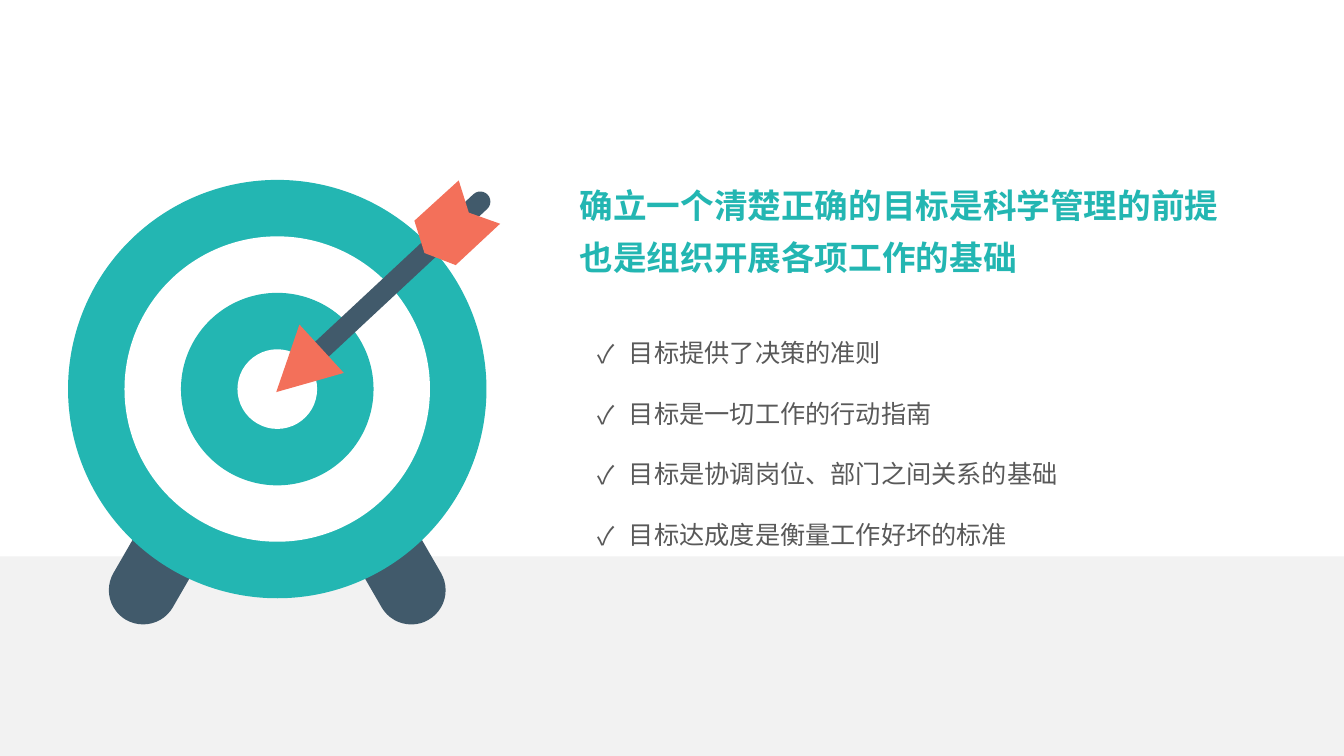
from pptx import Presentation
from pptx.dml.color import RGBColor
from pptx.enum.shapes import MSO_SHAPE as Preset
from pptx.enum.text import MSO_ANCHOR as Anchor, MSO_AUTO_SIZE as AutoSize, PP_ALIGN as Align
from pptx.oxml.ns import qn
from pptx.util import Inches, Pt
from lxml.etree import SubElement

FONT = "Noto Sans CJK SC"
TEAL, NAVY, CORAL = "23B6B2", "415A6B", "F3705A"
WHITE, BAND, GREY = "FFFFFF", "F2F2F2", "595959"
TARGET_X, TARGET_Y = 2.75, 3.86

TITLE = ["确立一个清楚正确的目标是科学管理的前提", "也是组织开展各项工作的基础"]
POINTS = [
    "目标提供了决策的准则",
    "目标是一切工作的行动指南",
    "目标是协调岗位、部门之间关系的基础",
    "目标达成度是衡量工作好坏的标准",
]


def color(hex_value):
    return RGBColor.from_string(hex_value)


def paint(shape, fill):
    shape.shadow.inherit = False
    shape.fill.solid()
    shape.fill.fore_color.rgb = color(fill)
    shape.line.fill.background()
    return shape


def add_preset(slide, preset, left, top, width, height, fill):
    box = [Inches(value) for value in (left, top, width, height)]
    return paint(slide.shapes.add_shape(preset, *box), fill)


def add_ring(slide, diameter, fill):
    radius = diameter / 2
    add_preset(slide, Preset.OVAL, TARGET_X - radius, TARGET_Y - radius, diameter, diameter, fill)


def add_bar(slide, center_x, center_y, width, length, rotation):
    """Round-ended bar, upright before it is rotated."""
    bar = add_preset(slide, Preset.ROUNDED_RECTANGLE, center_x - width / 2,
                     center_y - length / 2, width, length, NAVY)
    bar.adjustments[0] = 0.5
    bar.rotation = rotation


def add_polygon(slide, points, fill):
    start, *others = [(Inches(x), Inches(y)) for x, y in points]
    builder = slide.shapes.build_freeform(*start)
    builder.add_line_segments(others, close=True)
    paint(builder.convert_to_shape(), fill)


def place(shape, left, top, width, height):
    box = {"left": left, "top": top, "width": width, "height": height}
    for name, value in box.items():
        setattr(shape, name, Inches(value))


def write_lines(shape, lines, line_spacing, size, bold, text_color):
    frame = shape.text_frame
    frame_format = {"word_wrap": True, "auto_size": AutoSize.NONE, "vertical_anchor": Anchor.TOP}
    for name, value in frame_format.items():
        setattr(frame, name, value)
    frame.text = "\n".join(lines)
    for paragraph in frame.paragraphs:
        paragraph.alignment = Align.LEFT
        paragraph.line_spacing = line_spacing
        run = paragraph.runs[0]
        for name, value in {"name": FONT, "size": Pt(size), "bold": bold}.items():
            setattr(run.font, name, value)
        run.font.color.rgb = color(text_color)
        SubElement(run.font._element, qn("a:ea"), typeface=FONT)


def add_checks(shape, indent):
    for paragraph in shape.text_frame.paragraphs:
        properties = paragraph._p.get_or_add_pPr()
        properties.set("marL", str(Inches(indent)))
        properties.set("indent", str(-Inches(indent)))
        SubElement(properties, qn("a:buFont"), typeface=FONT)
        SubElement(properties, qn("a:buChar"), char="✓")


def add_target(slide):
    # Legs, mirrored about the centre
    for side in (-1, 1):
        add_bar(slide, TARGET_X + side * 1.05, 5.37, 0.68, 1.8, -side * 30)
    # Rings, from the outside in
    for diameter, fill in ((4.15, TEAL), (3.03, WHITE), (1.91, TEAL), (0.79, WHITE)):
        add_ring(slide, diameter, fill)


def add_arrow(slide):
    # Shaft, head and feathers
    add_bar(slide, 3.97, 2.74, 0.2, 2.37, 47)
    add_polygon(slide, [(2.97, 3.22), (2.74, 3.89), (3.41, 3.7)], CORAL)
    add_polygon(slide, [(4.21, 2.51), (4.52, 2.63), (4.96, 2.22),
                        (4.65, 2.11), (4.55, 1.79), (4.11, 2.19)], CORAL)


def main():
    presentation = Presentation()
    presentation.slide_width, presentation.slide_height = Inches(13.33), Inches(7.5)
    slide = presentation.slides.add_slide(presentation.slide_layouts[5])

    # Floor band
    add_preset(slide, Preset.RECTANGLE, 0, 5.52, 13.33, 1.98, BAND)

    # Title and checklist
    title = slide.shapes.title
    place(title, 5.65, 1.66, 6.64, 1.15)
    write_lines(title, TITLE, 1.3, 24, True, TEAL)
    checklist = slide.shapes.add_textbox(Inches(5.83), Inches(3), Inches(5.35), Inches(2.52))
    write_lines(checklist, POINTS, 2.0, 18, False, GREY)
    add_checks(checklist, 0.31)

    # Target with arrow
    add_target(slide)
    add_arrow(slide)

    presentation.save("out.pptx")


if __name__ == "__main__":
    main()
